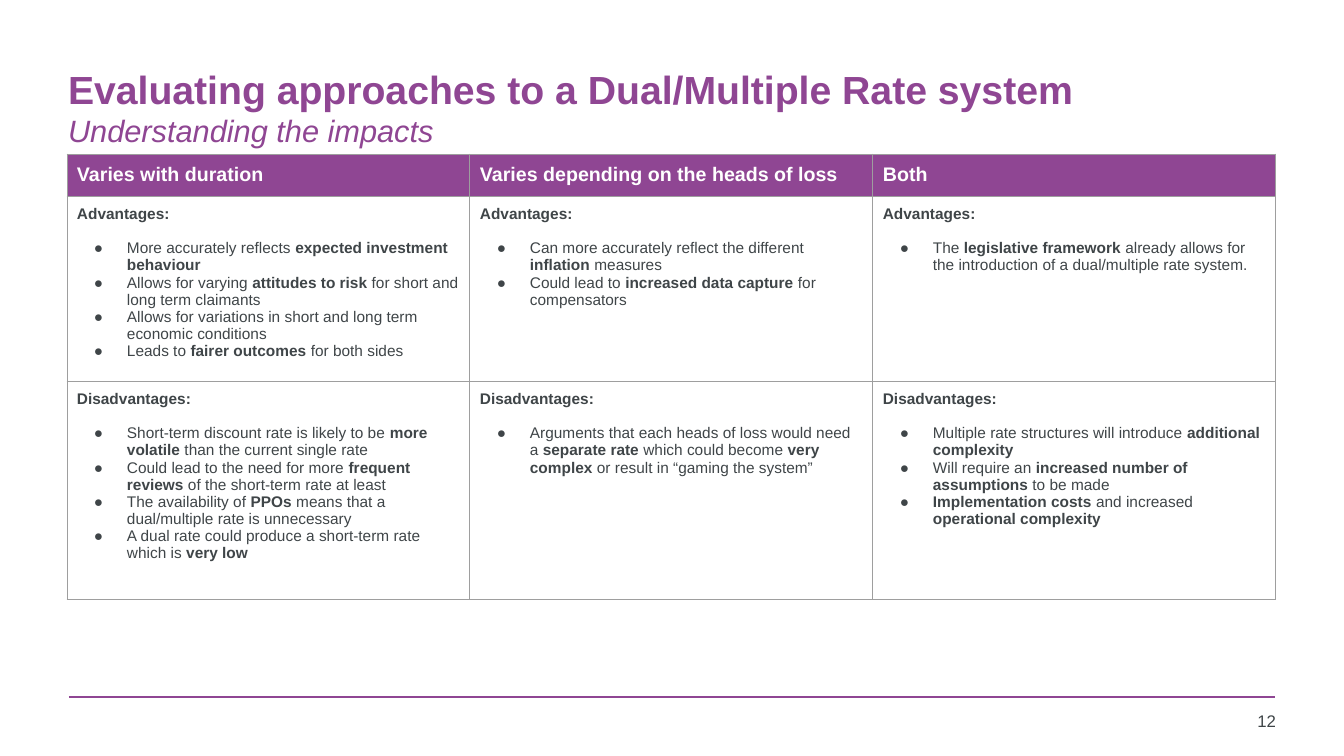
from dataclasses import dataclass

from lxml import etree
from pptx import Presentation
from pptx.dml.color import RGBColor
from pptx.enum.shapes import MSO_CONNECTOR
from pptx.enum.text import MSO_ANCHOR, MSO_AUTO_SIZE, PP_ALIGN
from pptx.oxml.ns import qn
from pptx.util import Emu, Pt

STRAIGHT = MSO_CONNECTOR.STRAIGHT
TOP, MIDDLE, BOTTOM = MSO_ANCHOR.TOP, MSO_ANCHOR.MIDDLE, MSO_ANCHOR.BOTTOM
LEFT, RIGHT = PP_ALIGN.LEFT, PP_ALIGN.RIGHT
NO_AUTOFIT = MSO_AUTO_SIZE.NONE
PX = 914400 / 100.8


@dataclass(frozen=True)
class Theme:
    font: str = "Arial"
    purple: str = "8F4693"
    ink: str = "3F4548"
    white: str = "FFFFFF"
    border: str = "9E9E9E"
    title: int = 28
    subtitle: int = 22
    header: int = 14
    body: int = 11
    number: int = 12


THEME = Theme()


def px(length):
    return Emu(round(length * PX))


def add_span(para, text, size, color, bold=False, italic=False):
    span = para.add_run()
    span.text = text
    font = span.font
    font.name, font.size = THEME.font, Pt(size)
    font.bold, font.italic = bold, italic
    font.color.rgb = RGBColor.from_string(color)


# Content: ** marks bold passages
HEADERS = ["Varies with duration", "Varies depending on the heads of loss", "Both"]
SECTIONS = [
    ("Advantages:", [
        ["More accurately reflects **expected investment behaviour**",
         "Allows for varying **attitudes to risk** for short and long term claimants",
         "Allows for variations in short and long term economic conditions",
         "Leads to **fairer outcomes **for both sides"],
        ["Can more accurately reflect the different **inflation **measures",
         "Could lead to **increased data capture **for compensators"],
        ["The **legislative framework **already allows for the introduction of "
         "a dual/multiple rate system."],
    ]),
    ("Disadvantages:", [
        ["Short-term discount rate is likely to be **more volatile **than the "
         "current single rate",
         "Could lead to the need for more **frequent reviews **of the short-term "
         "rate at least",
         "The availability of **PPOs **means that a dual/multiple rate is unnecessary",
         "A dual rate could produce a short-term rate which is **very low**"],
        ["Arguments that each heads of loss would need a **separate rate **which "
         "could become **very complex **or result in “gaming the system”"],
        ["Multiple rate structures will introduce **additional complexity**",
         "Will require an **increased number of assumptions **to be made",
         "**Implementation costs** and increased **operational complexity**"],
    ]),
]

deck = Presentation()
deck.slide_width, deck.slide_height = px(1344), px(756)
page = deck.slides.add_slide(deck.slide_layouts[5])

# Footer rule
rule = page.shapes.add_connector(STRAIGHT, px(69), px(697), px(1275), px(697))
rule.line.color.rgb = RGBColor.from_string(THEME.purple)
rule.line.width = Pt(1)
etree.SubElement(rule._element.spPr, qn("a:effectLst"))

# Comparison table
COLUMN_WIDTH = 403
ROW_HEIGHTS = [42, 185, 218]
frame = page.shapes.add_table(len(ROW_HEIGHTS), len(HEADERS), px(67), px(154),
                              px(COLUMN_WIDTH * len(HEADERS)), px(sum(ROW_HEIGHTS)))
table = frame.table
table.first_row = table.horz_banding = False
for column in table.columns:
    column.width = px(COLUMN_WIDTH)
for row, height in zip(table.rows, ROW_HEIGHTS):
    row.height = px(height)

# Cell margins and borders
for cell in table.iter_cells():
    cell.margin_left = cell.margin_right = px(10)
    cell.margin_top = cell.margin_bottom = px(10)
    cell.vertical_anchor = TOP
    cell.fill.background()
    for position, side in enumerate(("a:lnL", "a:lnR", "a:lnT", "a:lnB")):
        edge = etree.Element(qn(side), w=str(Pt(0.75)))
        solid = etree.SubElement(edge, qn("a:solidFill"))
        etree.SubElement(solid, qn("a:srgbClr"), val=THEME.border)
        cell._tc.get_or_add_tcPr().insert(position, edge)

# Header row
for column, header in enumerate(HEADERS):
    cell = table.cell(0, column)
    cell.fill.solid()
    cell.fill.fore_color.rgb = RGBColor.from_string(THEME.purple)
    add_span(cell.text_frame.paragraphs[0], header, THEME.header, THEME.white, bold=True)

# Advantages and disadvantages
for row, (heading, columns) in enumerate(SECTIONS, start=1):
    for column, points in enumerate(columns):
        text = table.cell(row, column).text_frame
        para = text.paragraphs[0]
        para.space_after = Pt(12)
        add_span(para, heading, THEME.body, THEME.ink, bold=True)
        for point in points:
            para = text.add_paragraph()
            props = para._p.get_or_add_pPr()
            props.set("marL", str(px(50)))
            props.set("indent", str(-px(33)))
            bullet_color = etree.SubElement(props, qn("a:buClr"))
            etree.SubElement(bullet_color, qn("a:srgbClr"), val=THEME.ink)
            etree.SubElement(props, qn("a:buFont"), typeface=THEME.font)
            etree.SubElement(props, qn("a:buChar"), char="●")
            for index, part in enumerate(point.split("**")):
                if part:
                    add_span(para, part, THEME.body, THEME.ink, bold=index % 2 == 1)

# Title and subtitle
title = page.shapes.title
title.left, title.top, title.width, title.height = px(58), px(44), px(1219), px(126)
text = title.text_frame
text.auto_size = NO_AUTOFIT
text.word_wrap = True
text.vertical_anchor = MIDDLE
text.margin_left = text.margin_right = px(10)
text.margin_top = text.margin_bottom = px(5)
para = text.paragraphs[0]
para.alignment = LEFT
add_span(para, "Evaluating approaches to a Dual/Multiple Rate system",
         THEME.title, THEME.purple, bold=True)
para.add_line_break()
add_span(para, "Understanding the impacts", THEME.subtitle, THEME.purple, italic=True)

# Page number
box = page.shapes.add_textbox(px(900), px(716), px(376), px(15))
text = box.text_frame
text.word_wrap = True
text.vertical_anchor = BOTTOM
text.margin_left = text.margin_right = text.margin_top = text.margin_bottom = 0
para = text.paragraphs[0]
para.alignment = RIGHT
add_span(para, "12", THEME.number, THEME.ink)

deck.save("out.pptx")
